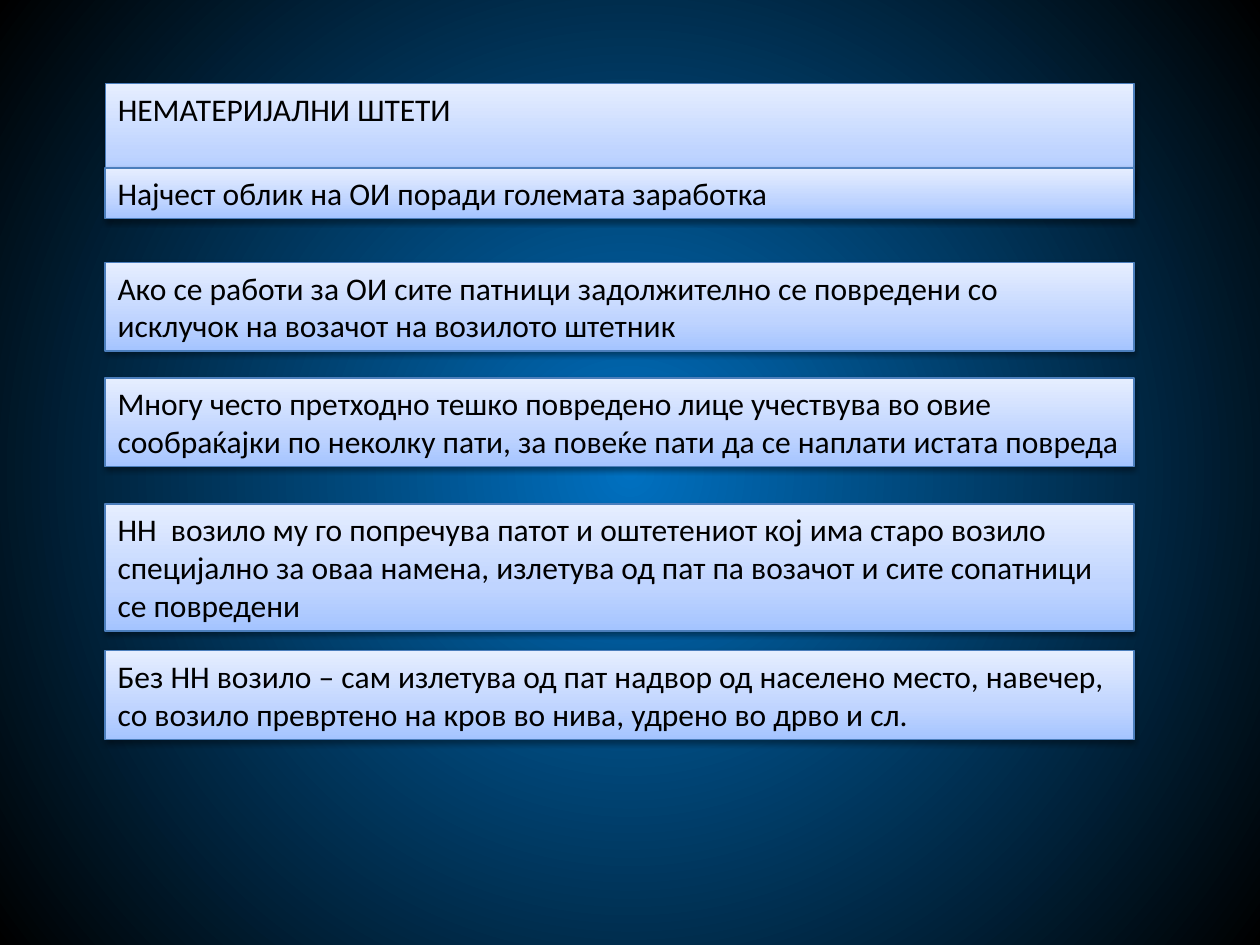
"""Build the slide on non-material damages as a stack of gradient panels."""
import dataclasses

import lxml.etree
import pptx
import pptx.dml.color
import pptx.enum.shapes
import pptx.enum.text
import pptx.oxml.ns
import pptx.util

Cm = pptx.util.Cm
Pt = pptx.util.Pt
RGB = pptx.dml.color.RGBColor.from_string
qn = pptx.oxml.ns.qn


@dataclasses.dataclass(frozen=True)
class Theme:
    font: str = "Calibri"
    text_size: float = 18
    text: str = "000000"
    outline: str = "4B7EBC"
    outline_width: float = 0.75
    panel: tuple = ((0, "A4C4FF"), (35, "BFD4FF"), (100, "E6EEFF"))
    backdrop: tuple = ((0, "0070C0"), (100, "000000"))
    shadow: str = "000000"
    shadow_opacity: int = 38
    shadow_blur: float = 3.1
    shadow_distance: float = 1.6


@dataclasses.dataclass(frozen=True)
class Panel:
    top: float
    lines: int
    text: str


THEME = Theme()
PANEL_LEFT, PANEL_WIDTH = 2.12, 20.74
PADDING, LINE_HEIGHT = 0.25, 0.77

HEADING = Panel(1.69, 1, "НЕМАТЕРИЈАЛНИ ШТЕТИ")
POINTS = (
    Panel(3.39, 1, "Најчест облик на ОИ поради големата заработка"),
    Panel(5.29, 2, "Ако се работи за ОИ сите патници задолжително се повредени со "
                   "исклучок на возачот на возилото штетник"),
    Panel(7.62, 2, "Многу често претходно тешко повредено лице учествува во овие "
                   "сообраќајки по неколку пати, за повеќе пати да се наплати "
                   "истата повреда"),
    Panel(10.16, 3, "НН  возило му го попречува патот и оштетениот кој има старо "
                    "возило специјално за оваа намена, излетува од пат па возачот "
                    "и сите сопатници се повредени"),
    Panel(13.12, 2, "Без НН возило – сам излетува од пат надвор од населено место, "
                    "навечер, со возило превртено на кров во нива, удрено во дрво "
                    "и сл."),
)


def add_node(parent, tag: str, **attributes):
    """Append a drawing element with the given attributes."""
    node = lxml.etree.SubElement(parent, qn(tag))
    for key, value in attributes.items():
        node.set(key, str(value))
    return node


def start_gradient(owner, fill, stops: tuple):
    """Give the owner a gradient with these stops and return its element."""
    fill.gradient()
    gradient = owner.element.find(".//" + qn("a:gradFill"))
    for child in list(gradient):
        gradient.remove(child)
    stop_list = add_node(gradient, "a:gsLst")
    for position, colour in stops:
        stop = add_node(stop_list, "a:gs", pos=position * 1000)
        add_node(stop, "a:srgbClr", val=colour)
    return gradient


def paint_backdrop(slide) -> None:
    """Fill the slide with a radial gradient from its centre."""
    gradient = start_gradient(slide, slide.background.fill, THEME.backdrop)
    radial = add_node(gradient, "a:path", path="circle")
    add_node(radial, "a:fillToRect", l=50000, t=50000, r=50000, b=50000)


def cast_shadow(shape) -> None:
    """Drop a soft shadow straight below the shape."""
    shape.shadow.inherit = False
    effects = shape.element.find(".//" + qn("a:effectLst"))
    shadow = add_node(effects, "a:outerShdw", blurRad=Pt(THEME.shadow_blur),
                      dist=Pt(THEME.shadow_distance), dir=90 * 60000,
                      rotWithShape=0)
    colour = add_node(shadow, "a:srgbClr", val=THEME.shadow)
    add_node(colour, "a:alpha", val=THEME.shadow_opacity * 1000)


def format_panel(shape, panel: Panel) -> None:
    """Place, style and fill one panel with its text."""
    shape.left, shape.top = Cm(PANEL_LEFT), Cm(panel.top)
    shape.width = Cm(PANEL_WIDTH)
    shape.height = Cm(PADDING * 2 / 2 + LINE_HEIGHT * panel.lines)
    gradient = start_gradient(shape, shape.fill, THEME.panel)
    add_node(gradient, "a:lin", ang=270 * 60000, scaled=1)
    shape.line.color.rgb = RGB(THEME.outline)
    shape.line.width = Pt(THEME.outline_width)
    cast_shadow(shape)

    frame = shape.text_frame
    frame.word_wrap = True
    frame.auto_size = pptx.enum.text.MSO_AUTO_SIZE.SHAPE_TO_FIT_TEXT
    frame.vertical_anchor = pptx.enum.text.MSO_ANCHOR.TOP
    paragraph = frame.paragraphs[0]
    paragraph.alignment = pptx.enum.text.PP_ALIGN.LEFT
    run = paragraph.add_run()
    run.text = panel.text
    run.font.name = THEME.font
    run.font.size = Pt(THEME.text_size)
    run.font.color.rgb = RGB(THEME.text)


def main() -> None:
    """Assemble and save the slide."""
    deck = pptx.Presentation()
    deck.slide_width, deck.slide_height = Cm(25.4), Cm(19.05)
    slide = deck.slides.add_slide(deck.slide_layouts.get_by_name("Title Only"))
    paint_backdrop(slide)
    format_panel(slide.shapes.title, HEADING)
    for point in POINTS:
        box = slide.shapes.add_shape(pptx.enum.shapes.MSO_SHAPE.RECTANGLE,
                                     0, 0, Cm(1), Cm(1))
        format_panel(box, point)
    deck.save("out.pptx")


if __name__ == "__main__":
    main()
